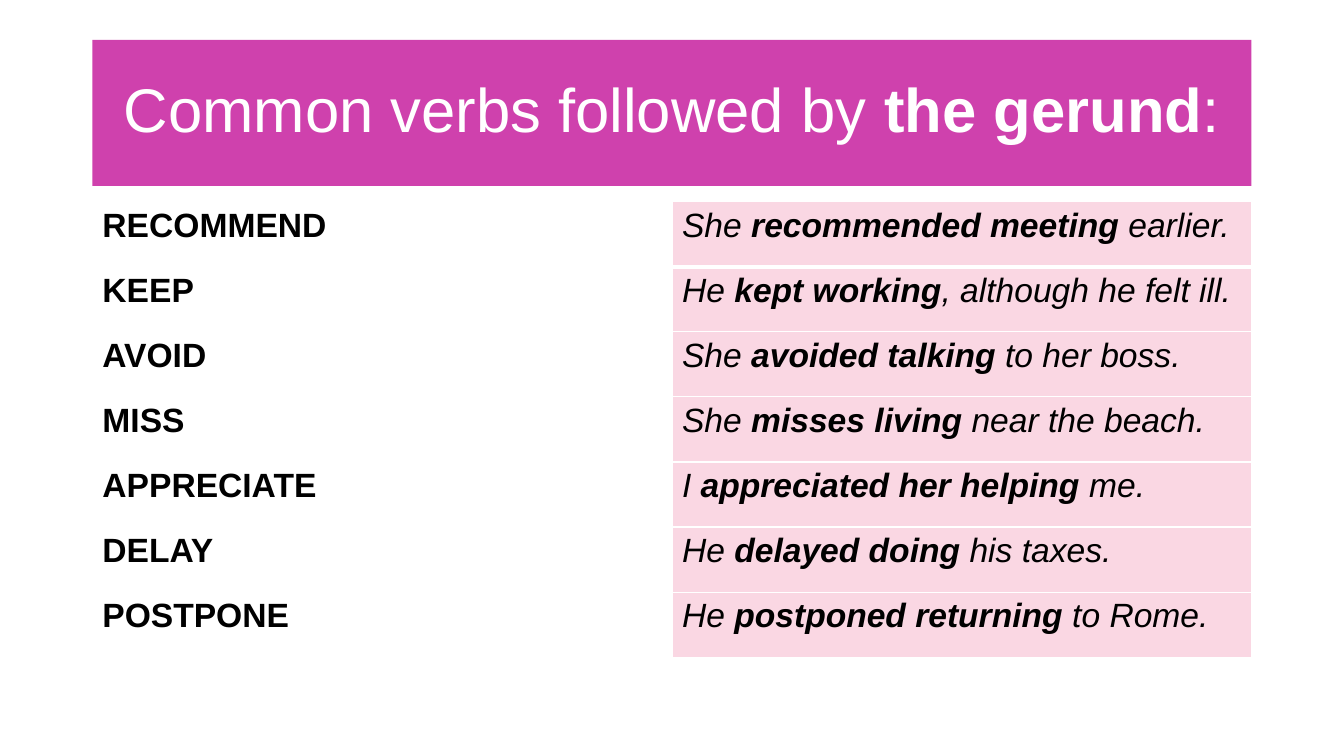
from dataclasses import dataclass

from lxml import etree
from pptx import Presentation
from pptx.dml.color import RGBColor
from pptx.enum import shapes, text
from pptx.oxml import ns
from pptx.util import Emu, Pt

PX = 9525  # EMU in one px, 96 px to the inch


@dataclass(frozen=True)
class Theme:
    font: str = "Arial"
    banner: str = "CF41AD"
    white: str = "FFFFFF"
    black: str = "000000"
    pink: str = "FAD7E3"
    title_size: int = 44
    body_size: int = 24


THEME = Theme()
LEFT, WIDTH = 88, 1104
BANNER_TOP, BANNER_HEIGHT = 38, 139
TABLE_TOP, ROW_HEIGHT = 192, 62

# verb, then the example before, in and after its bold part
VERBS = [
    ("RECOMMEND", "She ", "recommended meeting ", "earlier."),
    ("KEEP", "He ", "kept working", ", although he felt ill."),
    ("AVOID", "She ", "avoided talking ", "to her boss."),
    ("MISS", "She ", "misses living ", "near the beach."),
    ("APPRECIATE", "I ", "appreciated her helping ", "me."),
    ("DELAY", "He ", "delayed doing ", "his taxes."),
    ("POSTPONE", "He ", "postponed returning ", "to Rome."),
]


def px(*lengths):
    return [Emu(n * PX) for n in lengths]


def add_runs(p, parts, size, color, italic=False):
    """Add (wording, bold) parts to a paragraph."""
    for wording, bold in parts:
        r = p.add_run()
        r.text = wording
        look = {"name": THEME.font, "size": Pt(size), "bold": bold, "italic": italic}
        for key, value in look.items():
            setattr(r.font, key, value)
        r.font.color.rgb = RGBColor.from_string(color)


def set_fill(target, color):
    target.fill.solid()
    target.fill.fore_color.rgb = RGBColor.from_string(color)


def add_banner(slide, parts):
    sp = slide.shapes.add_shape(
        shapes.MSO_SHAPE.RECTANGLE, *px(LEFT, BANNER_TOP, WIDTH, BANNER_HEIGHT))
    sp.shadow.inherit = False
    set_fill(sp, THEME.banner)
    sp.line.fill.background()
    tf = sp.text_frame
    tf.word_wrap = True
    tf.vertical_anchor = text.MSO_ANCHOR.MIDDLE
    p = tf.paragraphs[0]
    p.alignment = text.PP_ALIGN.CENTER
    p.line_spacing = 0.9
    add_runs(p, parts, THEME.title_size, THEME.white)


def set_borders(cell, widths):
    """Draw white borders; widths maps the sides L, R, T, B to points."""
    tc_pr = cell._tc.get_or_add_tcPr()
    for side, width in widths.items():
        ln = etree.SubElement(tc_pr, ns.qn(f"a:ln{side}"), w=str(Pt(width)))
        fill = etree.SubElement(ln, ns.qn("a:solidFill"))
        etree.SubElement(fill, ns.qn("a:srgbClr"), val=THEME.white)


def fill_cell(cell, parts, color, borders, italic=False):
    set_borders(cell, borders)
    set_fill(cell, color)
    add_runs(cell.text_frame.paragraphs[0], parts, THEME.body_size, THEME.black, italic)


def add_verb_table(slide, verbs):
    frame = slide.shapes.add_table(
        len(verbs), 2, *px(LEFT, TABLE_TOP, WIDTH, ROW_HEIGHT * len(verbs)))
    table = frame.table
    table.first_row = table.horz_banding = False
    for i, (verb, before, stressed, after) in enumerate(verbs):
        borders = {"L": 1, "R": 1, "T": 3 if i == 1 else 1, "B": 3 if i == 0 else 1}
        example = [(before, False), (stressed, True), (after, False)]
        fill_cell(table.cell(i, 0), [(verb, True)], THEME.white, borders)
        fill_cell(table.cell(i, 1), example, THEME.pink, borders, italic=True)


def main():
    prs = Presentation()
    prs.slide_width, prs.slide_height = px(1280, 720)
    slide = prs.slides.add_slide(prs.slide_layouts[6])
    add_banner(slide, [("Common verbs followed by ", False), ("the gerund", True), (":", False)])
    add_verb_table(slide, VERBS)
    prs.save("out.pptx")


if __name__ == "__main__":
    main()
